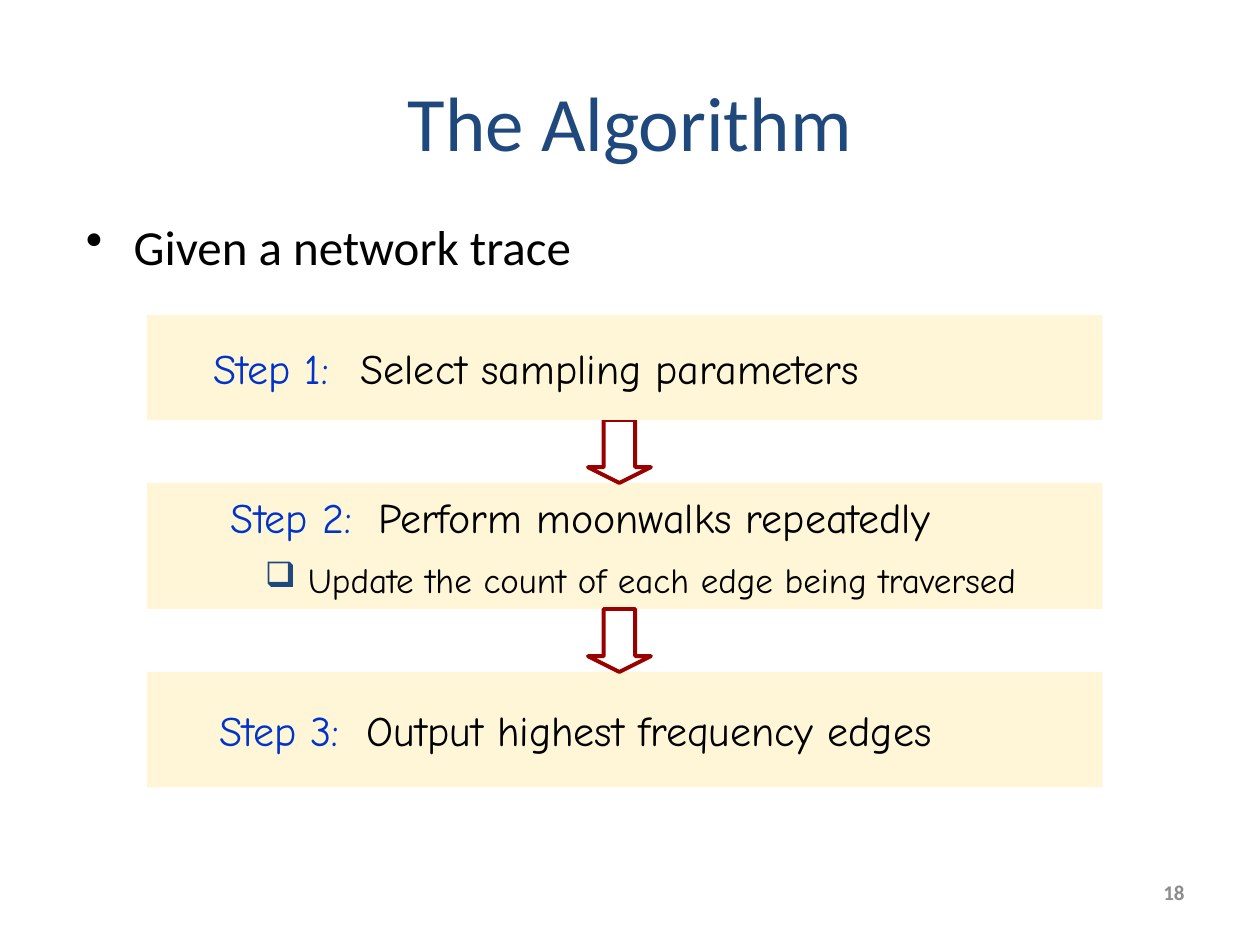
from pptx import Presentation
from pptx.dml.color import RGBColor
from pptx.enum.shapes import MSO_SHAPE as Shape
from pptx.enum.text import MSO_ANCHOR as Anchor, PP_ALIGN as Align
from pptx.oxml.ns import qn
from pptx.util import Inches, Pt
from lxml.etree import SubElement

BLACK = RGBColor(0x00, 0x00, 0x00)
NAVY = RGBColor(0x1F, 0x49, 0x7D)
BLUE = RGBColor(0x00, 0x33, 0xCC)
RED = RGBColor(0x99, 0x00, 0x00)
CREAM = RGBColor(0xFE, 0xF6, 0xD6)
GRAY = RGBColor(0x8C, 0x8C, 0x8C)

COLUMNS, ROWS = 120, 90
BOX_LEFT, BOX_WIDTH = 14, 91
ARROW_LEFT, ARROW_SIZE = 56, 6
STEP_TAB = Inches(1.17)


class SlideBuilder:
    """Draws on one slide; lengths are columns and rows of the grid."""

    heading_font = "Calibri"
    step_font = "Comic Neue"

    def __init__(self, deck):
        self.slide = deck.slides.add_slide(deck.slide_layouts[6])
        self.column = deck.slide_width / COLUMNS
        self.row = deck.slide_height / ROWS

    def area(self, left, top, width, height):
        return (round(left * self.column), round(top * self.row),
                round(width * self.column), round(height * self.row))

    def run(self, paragraph, text, size, color, font, bold=False):
        run = paragraph.add_run()
        run.text = text
        run.font.size = Pt(size)
        run.font.name = font
        run.font.bold = bold
        run.font.color.rgb = color

    def bullet(self, paragraph, char, indent, hanging, color):
        props = paragraph._p.get_or_add_pPr()
        props.set("marL", str(Inches(indent)))
        props.set("indent", str(-Inches(hanging)))
        tint = SubElement(props, qn("a:buClr"))
        SubElement(tint, qn("a:srgbClr"), val=str(color))
        SubElement(props, qn("a:buChar"), char=char)

    def text(self, area, words, size, color, align=Align.LEFT,
             anchor=Anchor.MIDDLE, bold=False):
        frame = self.slide.shapes.add_textbox(*self.area(*area)).text_frame
        frame.word_wrap = True
        frame.vertical_anchor = anchor
        paragraph = frame.paragraphs[0]
        paragraph.alignment = align
        self.run(paragraph, words, size, color, self.heading_font, bold)
        return paragraph

    def shape(self, kind, area):
        shape = self.slide.shapes.add_shape(kind, *self.area(*area))
        shape.shadow.inherit = False
        return shape

    def step(self, top, height, inset, label, action, detail=None):
        box = self.shape(Shape.RECTANGLE, (BOX_LEFT, top, BOX_WIDTH, height))
        box.fill.solid()
        box.fill.fore_color.rgb = CREAM
        box.line.fill.background()
        frame = box.text_frame
        frame.word_wrap = True
        frame.vertical_anchor = Anchor.MIDDLE
        frame.margin_left = round(inset * self.column)
        heading = frame.paragraphs[0]
        heading.alignment = Align.LEFT
        self.run(heading, label, 24, BLUE, self.step_font)
        self.run(heading, "\t" + action, 24, BLACK, self.step_font)
        tabs = SubElement(heading._p.get_or_add_pPr(), qn("a:tabLst"))
        SubElement(tabs, qn("a:tab"), pos=str(STEP_TAB), algn="l")
        if detail:
            item = frame.add_paragraph()
            item.alignment = Align.LEFT
            item.space_before = Pt(9)
            self.bullet(item, "❑", 0.61, 0.34, NAVY)
            self.run(item, detail, 20, BLACK, self.step_font)

    def arrow(self, top):
        arrow = self.shape(Shape.DOWN_ARROW,
                           (ARROW_LEFT, top, ARROW_SIZE, ARROW_SIZE))
        arrow.adjustments[0] = 0.5
        arrow.adjustments[1] = 0.25
        arrow.fill.background()
        arrow.line.color.rgb = RED
        arrow.line.width = Pt(2.25)


def main():
    deck = Presentation()
    deck.slide_width, deck.slide_height = Inches(10), Inches(7.5)
    page = SlideBuilder(deck)

    page.text((86, 82, 28, 6), "18", 12, GRAY, Align.RIGHT, bold=True)
    page.text((6, 4, 108, 15), "The Algorithm", 44, NAVY, Align.CENTER)
    given = page.text((7, 20, 108, 8), "Given a network trace", 28, BLACK,
                      anchor=Anchor.TOP)
    page.bullet(given, "•", 0.38, 0.38, BLACK)

    page.step(46, 12, 8, "Step 2:", "Perform moonwalks repeatedly",
              "Update the count of each edge being traversed")
    page.step(64, 11, 6.9, "Step 3:", "Output highest frequency edges")
    for top in (40, 58):
        page.arrow(top)
    page.step(30, 10, 6.3, "Step 1:", "Select sampling parameters")

    deck.save("out.pptx")


if __name__ == "__main__":
    main()
